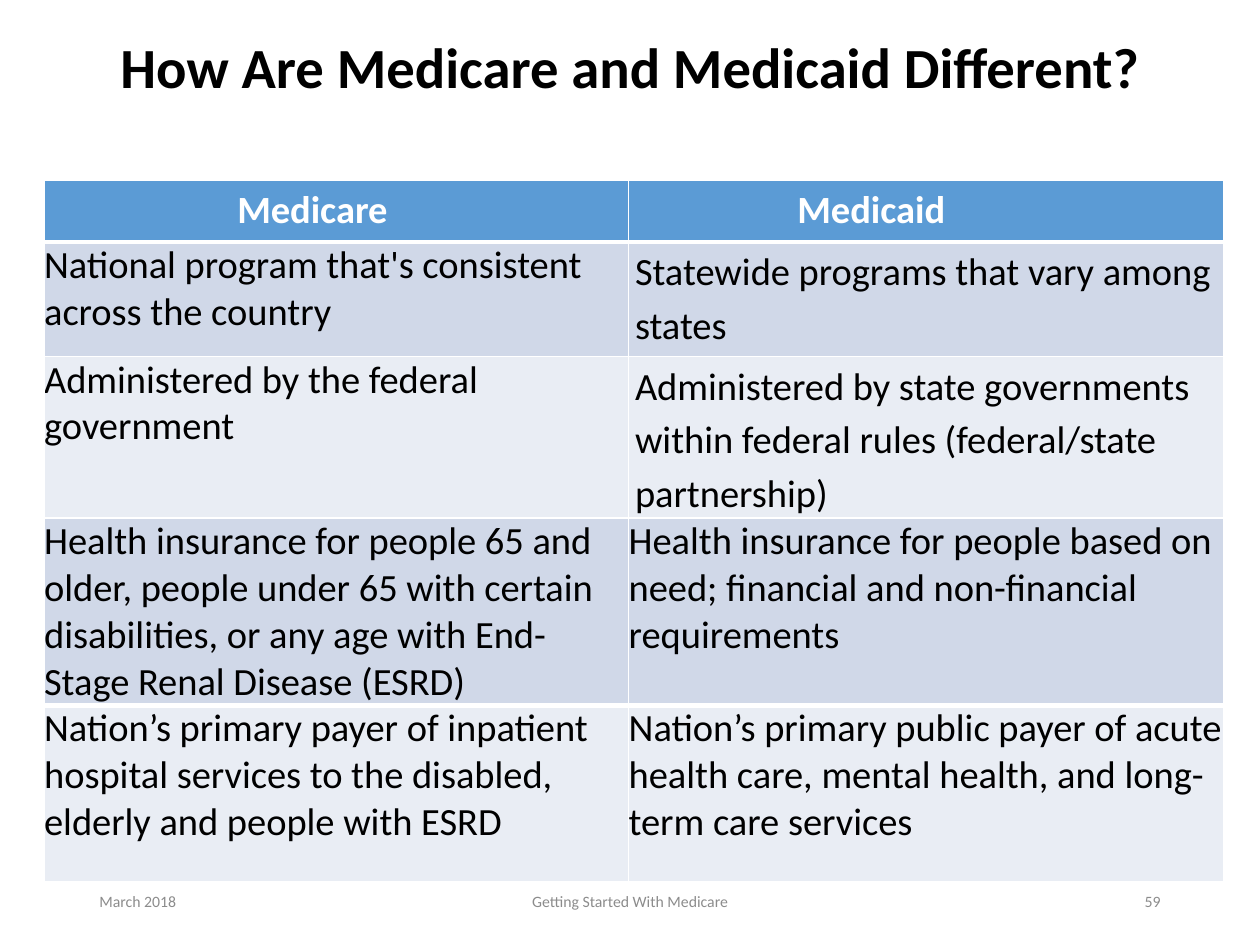
from dataclasses import dataclass

from lxml.etree import SubElement
from pptx import Presentation
from pptx.dml.color import RGBColor
from pptx.enum.text import MSO_ANCHOR, MSO_AUTO_SIZE, PP_ALIGN
from pptx.oxml.ns import qn
from pptx.util import Pt

EMU_PER_PX = 9144


@dataclass(frozen=True)
class Theme:
    font: str = "Calibri"
    ink: str = "000000"
    paper: str = "FFFFFF"
    header: str = "5B9BD5"
    bands: tuple = ("D0D8E8", "E9EDF4")
    muted: str = "8C8C8C"
    title_size: float = 32.4
    table_size: float = 22
    footer_size: float = 9
    thin_line: float = 1
    thick_line: float = 3


THEME = Theme()

COLUMN_WIDTHS = (464, 472)
ROW_HEIGHTS = (49, 91, 120, 140, 140)
HEADINGS = ("Medicare", "Medicaid")
HEADING_INSETS = (38, 87)
COMPARISONS = (
    ("National program that's consistent across the country",
     "Statewide programs that vary among states"),
    ("Administered by the federal government",
     "Administered by state governments within federal rules (federal/state partnership)"),
    ("Health insurance for people 65 and older, people under 65 with certain disabilities, "
     "or any age with End-Stage Renal Disease (ESRD)",
     "Health insurance for people based on need; financial and non-financial requirements"),
    ("Nation’s primary payer of inpatient hospital services to the disabled, "
     "elderly and people with ESRD",
     "Nation’s primary public payer of acute health care, mental health, "
     "and long-term care services"),
)
LOOSE_ROWS = (1, 2)
FOOTERS = (
    (0, 225, "March 2018", PP_ALIGN.LEFT),
    (262, 338, "Getting Started With Medicare", PP_ALIGN.CENTER),
    (637, 225, "59", PP_ALIGN.RIGHT),
)


def px(length):
    return length * EMU_PER_PX


def style(paragraph, size, color, bold=False, align=PP_ALIGN.LEFT, spacing=None):
    paragraph.alignment = align
    paragraph.line_spacing = spacing
    paragraph.font.name = THEME.font
    paragraph.font.size = Pt(size)
    paragraph.font.bold = bold
    paragraph.font.color.rgb = RGBColor.from_string(color)


def add_title(slide, left, top, width, height):
    title = slide.shapes.title
    title.left, title.top, title.width, title.height = map(px, (left, top, width, height))
    frame = title.text_frame
    frame.text = "How Are Medicare and Medicaid Different?"
    frame.word_wrap = True
    frame.auto_size = MSO_AUTO_SIZE.NONE
    frame.vertical_anchor = MSO_ANCHOR.MIDDLE
    style(frame.paragraphs[0], THEME.title_size, THEME.ink, True, PP_ALIGN.CENTER, 0.9)


def set_borders(cell, top, bottom):
    properties = cell._tc.get_or_add_tcPr()
    sides = {"L": THEME.thin_line, "R": THEME.thin_line, "T": top, "B": bottom}
    for side, weight in sides.items():
        line = SubElement(properties, qn(f"a:ln{side}"), w=str(Pt(weight)))
        fill = SubElement(line, qn("a:solidFill"))
        SubElement(fill, qn("a:srgbClr"), val=THEME.paper)


def fill_cell(cell, text, row, column):
    last = len(COMPARISONS)
    set_borders(
        cell,
        THEME.thick_line if row in (1, last) else THEME.thin_line,
        THEME.thick_line if row in (0, last - 1) else THEME.thin_line,
    )
    loose = column == 1 and row in LOOSE_ROWS
    cell.margin_top = cell.margin_bottom = 0
    cell.margin_left = px(5 if loose else 0)
    cell.margin_right = px(0 if row else HEADING_INSETS[column])
    cell.text = text
    cell.fill.solid()
    background = THEME.bands[(row - 1) % 2] if row else THEME.header
    cell.fill.fore_color.rgb = RGBColor.from_string(background)
    paragraph = cell.text_frame.paragraphs[0]
    if row:
        style(paragraph, THEME.table_size, THEME.ink, spacing=1.15 if loose else None)
    else:
        style(paragraph, THEME.table_size, THEME.paper, True, PP_ALIGN.CENTER, 1.15)


def add_comparison(slide, left, top):
    table = slide.shapes.add_table(
        len(ROW_HEIGHTS), len(COLUMN_WIDTHS), px(left), px(top),
        px(sum(COLUMN_WIDTHS)), px(sum(ROW_HEIGHTS)),
    ).table
    for column, width in zip(table.columns, COLUMN_WIDTHS):
        column.width = px(width)
    for row, height in zip(table.rows, ROW_HEIGHTS):
        row.height = px(height)
    for row, texts in enumerate((HEADINGS, *COMPARISONS)):
        for column, text in enumerate(texts):
            fill_cell(table.cell(row, column), text, row, column)


def add_footer(slide, left, top, height):
    for offset, width, text, align in FOOTERS:
        footer = slide.shapes.add_textbox(px(left + offset), px(top), px(width), px(height))
        frame = footer.text_frame
        frame.word_wrap = True
        frame.vertical_anchor = MSO_ANCHOR.MIDDLE
        frame.text = text
        style(frame.paragraphs[0], THEME.footer_size, THEME.muted, align=align)


def main():
    presentation = Presentation()
    presentation.slide_width = px(1000)
    presentation.slide_height = px(750)
    slide = presentation.slides.add_slide(presentation.slide_layouts.get_by_name("Title Only"))
    add_title(slide, 69, 0, 862, 112)
    add_comparison(slide, 35, 143)
    add_footer(slide, 69, 695, 40)
    presentation.save("out.pptx")


if __name__ == "__main__":
    main()
